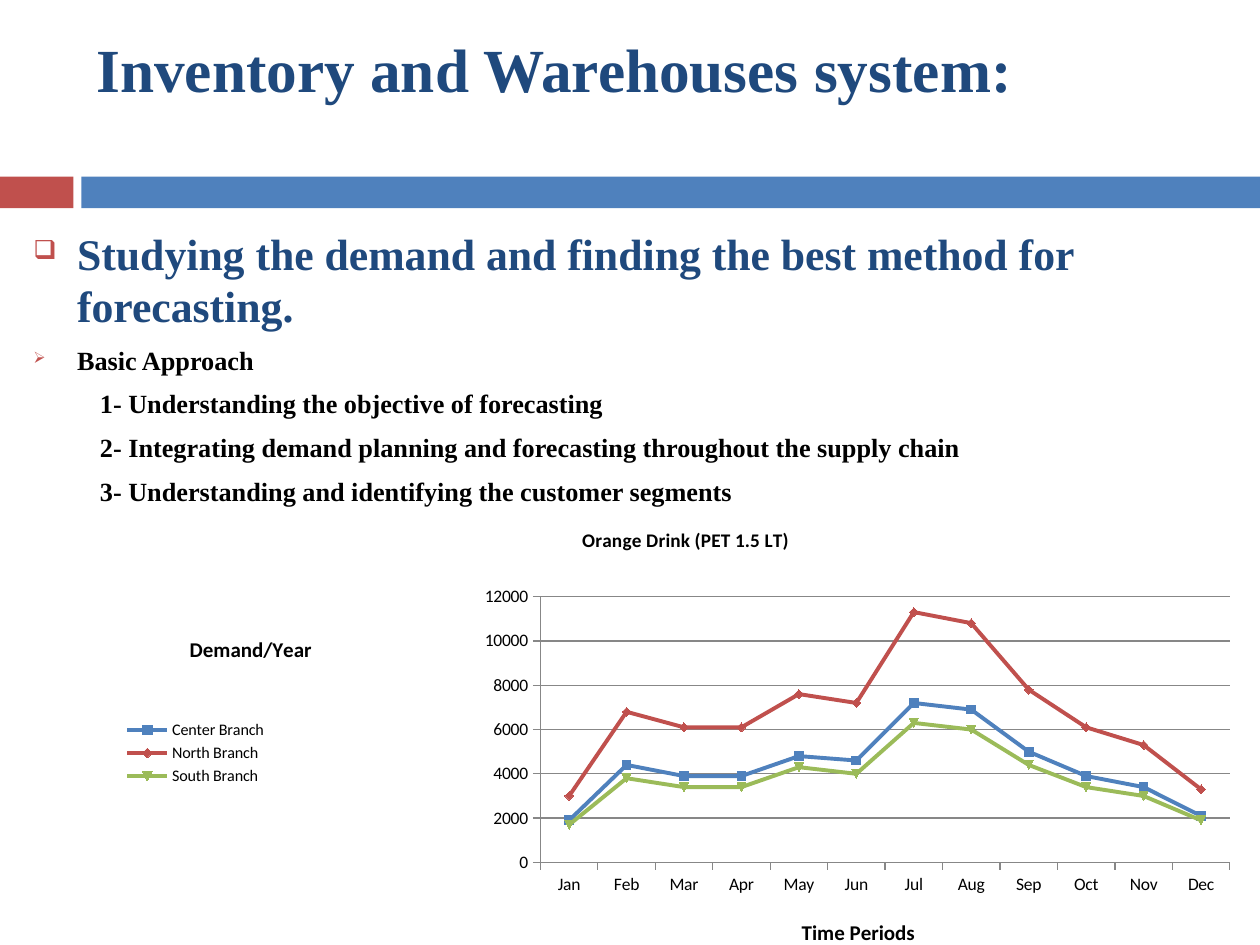
from lxml.etree import SubElement, Element
from pptx import Presentation
from pptx.chart.data import CategoryChartData
from pptx.dml.color import RGBColor
from pptx.enum.chart import XL_CHART_TYPE, XL_LEGEND_POSITION, XL_TICK_MARK
from pptx.enum.shapes import MSO_SHAPE
from pptx.oxml.ns import qn
from pptx.util import Pt

COLORS = {"red": "C0504D", "blue": "4F81BD", "green": "9BBB59",
          "navy": "1F497D", "black": "000000", "gray": "878787"}
SERIF, SANS = "Times New Roman", "Calibri"
MONTHS = ["Jan", "Feb", "Mar", "Apr", "May", "Jun",
          "Jul", "Aug", "Sep", "Oct", "Nov", "Dec"]
BRANCHES = [
    ("Center Branch ", "blue",
     [1900, 4400, 3900, 3900, 4800, 4600, 7200, 6900, 5000, 3900, 3400, 2100]),
    ("North Branch ", "red",
     [3000, 6800, 6100, 6100, 7600, 7200, 11300, 10800, 7800, 6100, 5300, 3300]),
    ("South Branch", "green",
     [1700, 3800, 3400, 3400, 4300, 4000, 6300, 6000, 4400, 3400, 3000, 1900]),
]
BODY = [
    ("Studying the demand and finding the best method for forecasting.",
     25, "navy", "❑"),
    ("Basic Approach", 15, "black", "➢"),
    ("1- Understanding the objective of forecasting", 15, "black", None),
    ("2- Integrating demand planning and forecasting throughout the supply chain",
     15, "black", None),
    ("3- Understanding and identifying the customer segments", 15, "black", None),
]


def rgb(name):
    return RGBColor.from_string(COLORS[name])


def style_font(font, name, size, color="black", bold=False):
    font.name, font.size, font.bold = name, Pt(size), bold
    font.color.rgb = rgb(color)


def add_bar(slide, left, width, color):
    s = slide.shapes.add_shape(MSO_SHAPE.RECTANGLE, Pt(left), Pt(101),
                               Pt(width), Pt(18))
    s.shadow.inherit = False
    s.fill.solid()
    s.fill.fore_color.rgb = rgb(color)
    s.line.fill.background()


def add_textbox(slide, left, top, width, height):
    tf = slide.shapes.add_textbox(Pt(left), Pt(top), Pt(width), Pt(height)).text_frame
    tf.word_wrap = True
    return tf


def add_title(slide):
    tf = add_textbox(slide, 48, 18, 642, 78)
    tf.margin_top = 0
    tf.text = "Inventory and Warehouses system:"
    style_font(tf.paragraphs[0].runs[0].font, SERIF, 35, "navy", True)


def set_indent(p, bullet):
    pPr = p._p.get_or_add_pPr()
    pPr.set("marL", str(Pt(25 if bullet else 38)))
    pPr.set("indent", str(Pt(-25 if bullet else 0)))
    if bullet:
        color = SubElement(pPr, qn("a:buClr"))
        SubElement(color, qn("a:srgbClr"), val=COLORS["red"])
        SubElement(pPr, qn("a:buSzPct"), val="60000")
        SubElement(pPr, qn("a:buChar"), char=bullet)


def add_body(slide):
    tf = add_textbox(slide, 12, 126, 702, 396)
    tf.text = "\n".join(text for text, *_ in BODY)
    for p, (_, size, color, bullet) in zip(tf.paragraphs, BODY):
        p.space_before = Pt(7)
        set_indent(p, bullet)
        style_font(p.runs[0].font, SERIF, size, color, True)


def set_layout(parent, index, x, y, w=None, h=None, inner=False):
    for old in parent.findall(qn("c:layout")):
        parent.remove(old)
    layout = Element(qn("c:layout"))
    parent.insert(index, layout)
    manual = SubElement(layout, qn("c:manualLayout"))
    if inner:
        SubElement(manual, qn("c:layoutTarget"), val="inner")
    for tag in ("xMode", "yMode"):
        SubElement(manual, qn(f"c:{tag}"), val="edge")
    for tag, value in zip("xywh", (x, y, w, h)):
        if value is not None:
            SubElement(manual, qn(f"c:{tag}"), val=str(value))


def set_chart_title(owner, text, size, x, y):
    title = owner.chart_title if hasattr(owner, "chart_title") else owner.axis_title
    tf = title.text_frame
    tf.text = text
    tf._txBody.bodyPr.set("rot", "0")
    tf._txBody.bodyPr.set("vert", "horz")
    style_font(tf.paragraphs[0].runs[0].font, SANS, size, bold=True)
    set_layout(title._element, 1, x, y)


def style_axis(axis):
    axis.major_tick_mark = XL_TICK_MARK.OUTSIDE
    axis.minor_tick_mark = XL_TICK_MARK.NONE
    axis.format.line.color.rgb = rgb("gray")
    style_font(axis.tick_labels.font, SANS, 10)


def add_demand_chart(slide):
    data = CategoryChartData()
    data.categories = MONTHS
    for name, _, values in BRANCHES:
        data.add_series(name, values)
    chart = slide.shapes.add_chart(XL_CHART_TYPE.LINE_MARKERS, Pt(60), Pt(270),
                                   Pt(660), Pt(324), data).chart
    style_font(chart.font, SANS, 10)
    chart.plots[0].vary_by_categories = False
    for series, (_, color, _) in zip(chart.plots[0].series, BRANCHES):
        series.smooth = False
        series.format.line.color.rgb = rgb(color)
        series.format.line.width = Pt(2.25)
        marker = series.marker.format
        marker.fill.solid()
        marker.fill.fore_color.rgb = rgb(color)
        marker.line.color.rgb = rgb(color)

    months, demand = chart.category_axis, chart.value_axis
    style_axis(months)
    style_axis(demand)
    demand.minimum_scale, demand.maximum_scale, demand.major_unit = 0, 12000, 2000
    demand.major_gridlines.format.line.color.rgb = rgb("gray")
    set_chart_title(chart, "Orange Drink (PET 1.5 LT)", 11, 0.41, 0.09)
    set_chart_title(months, "Time Periods", 12, 0.6, 0.78)
    set_chart_title(demand, "Demand/Year", 12, 0.07, 0.28)

    chart.has_legend = True
    legend = chart.legend
    legend.position = XL_LEGEND_POSITION.LEFT
    legend.include_in_layout = False
    style_font(legend.font, SANS, 9.2)
    set_layout(legend._element, 1, 0.01, 0.43, 0.14, 0.13)
    plot_area = chart._chartSpace.chart.plotArea
    set_layout(plot_area, 0, 0.377, 0.219, 0.597, 0.469, inner=True)


def main():
    prs = Presentation()
    prs.slide_width, prs.slide_height = Pt(720), Pt(540)
    slide = prs.slides.add_slide(prs.slide_layouts[6])
    add_bar(slide, 0, 42, "red")
    add_bar(slide, 46.5, 673.5, "blue")
    add_body(slide)
    add_title(slide)
    add_demand_chart(slide)
    prs.save("out.pptx")


if __name__ == "__main__":
    main()
